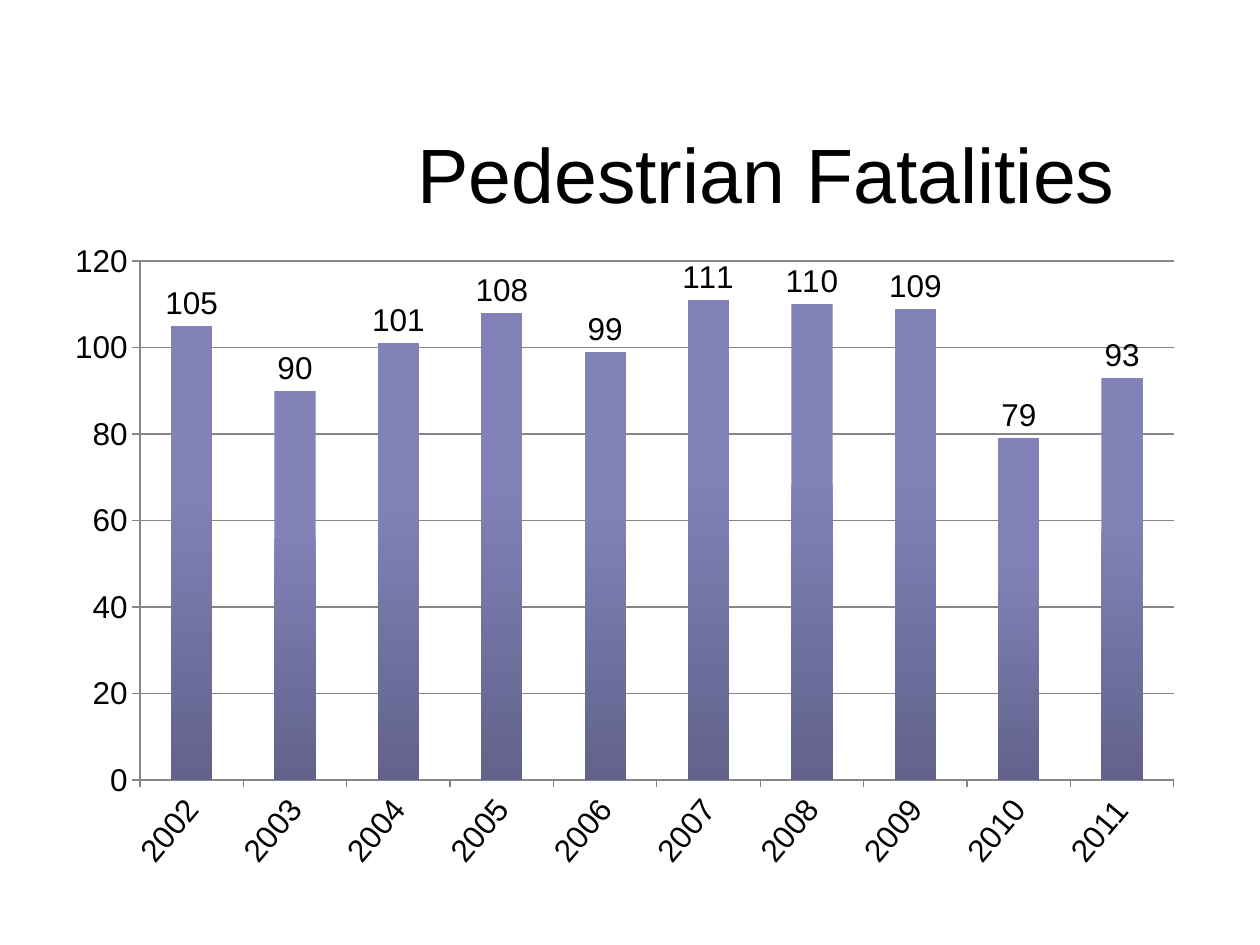
from lxml import etree
from pptx import Presentation
from pptx.chart.data import CategoryChartData
from pptx.dml.color import RGBColor
from pptx.enum.chart import XL_CHART_TYPE, XL_LABEL_POSITION, XL_TICK_MARK
from pptx.enum.text import MSO_ANCHOR, PP_ALIGN
from pptx.oxml.ns import qn
from pptx.util import Pt

COLUMN = XL_CHART_TYPE.COLUMN_CLUSTERED
ABOVE = XL_LABEL_POSITION.OUTSIDE_END
OUT = XL_TICK_MARK.OUTSIDE
NONE = XL_TICK_MARK.NONE
MIDDLE = MSO_ANCHOR.MIDDLE
CENTER = PP_ALIGN.CENTER

BLACK = RGBColor(0, 0, 0)
GRAY = RGBColor(0x86, 0x86, 0x86)
LIGHT = RGBColor(0x82, 0x82, 0xB8)
DARK = RGBColor(0x62, 0x62, 0x8C)
FONT = "Arial"

TITLE = "Pedestrian Fatalities"
START = 2002
DEATHS = [105, 90, 101, 108, 99, 111, 110, 109, 79, 93]

TITLE_BOX = (336, 94, 861, 158)
CHART_BOX = (53, 231, 1144, 651)
PLOT_BOX = (140, 261, 1034, 519)


def px(n):
    return round(n * 914400 / 126)


def style(font, size):
    font.name = FONT
    font.size = Pt(size)
    font.color.rgb = BLACK


def add_title(slide):
    box = slide.shapes.add_textbox(*map(px, TITLE_BOX))
    frame = box.text_frame
    frame.word_wrap = True
    frame.vertical_anchor = MIDDLE
    frame.text = TITLE
    para = frame.paragraphs[0]
    para.alignment = CENTER
    style(para.runs[0].font, 44)


def place_plot(chart):
    left, top, width, height = CHART_BOX
    x, y, w, h = PLOT_BOX
    parts = {
        "layoutTarget": "inner", "xMode": "edge", "yMode": "edge",
        "x": round((x - left) / width, 4), "y": round((y - top) / height, 4),
        "w": round(w / width, 4), "h": round(h / height, 4),
    }
    area = chart._chartSpace.chart.plotArea
    for old in area.findall(qn("c:layout")):
        area.remove(old)
    layout = etree.Element(qn("c:layout"))
    manual = etree.SubElement(layout, qn("c:manualLayout"))
    for name, val in parts.items():
        etree.SubElement(manual, qn("c:" + name)).set("val", str(val))
    area.insert(0, layout)


def add_chart(slide):
    data = CategoryChartData()
    data.categories = [str(START + i) for i in range(len(DEATHS))]
    data.add_series("Series 1", DEATHS)
    chart = slide.shapes.add_chart(COLUMN, *map(px, CHART_BOX), data).chart
    chart.has_title = False
    chart.has_legend = False
    style(chart.font, 18)
    place_plot(chart)

    years, scale = chart.category_axis, chart.value_axis
    for axis in (years, scale):
        axis.major_tick_mark = OUT
        axis.minor_tick_mark = NONE
        axis.format.line.color.rgb = GRAY
        axis.format.line.width = Pt(0.75)
        style(axis.tick_labels.font, 18)
    years._element.txPr.bodyPr.set("rot", str(-50 * 60000))
    scale.minimum_scale = 0
    scale.maximum_scale = 120
    scale.major_unit = 20
    scale.has_major_gridlines = True
    grid = scale.major_gridlines.format.line
    grid.color.rgb = GRAY
    grid.width = Pt(0.75)

    plot = chart.plots[0]
    plot.gap_width = 150
    plot.vary_by_categories = False
    fill = plot.series[0].format.fill
    fill.gradient()
    fill.gradient_angle = 270
    for stop, color, at in zip(fill.gradient_stops, (LIGHT, DARK), (0.35, 1)):
        stop.color.rgb = color
        stop.position = at

    plot.has_data_labels = True
    labels = plot.data_labels
    labels.show_value = True
    labels.position = ABOVE
    style(labels.font, 18)


def main():
    deck = Presentation()
    deck.slide_width = px(1260)
    deck.slide_height = px(945)
    slide = deck.slides.add_slide(deck.slide_layouts[6])
    add_title(slide)
    add_chart(slide)
    deck.save("out.pptx")


if __name__ == "__main__":
    main()
